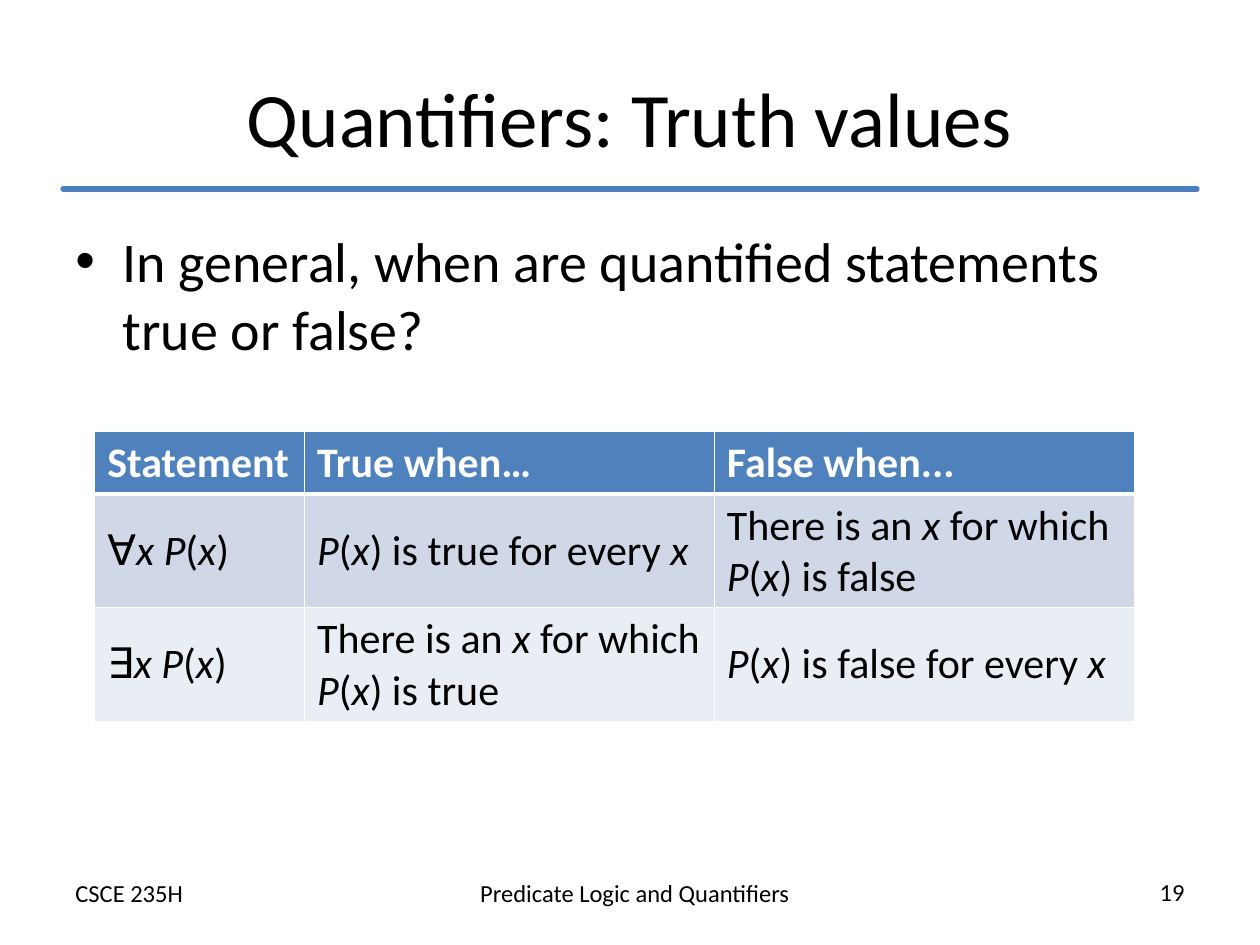
from lxml.etree import SubElement
from pptx import Presentation
from pptx.dml.color import RGBColor
from pptx.enum.shapes import MSO_CONNECTOR
from pptx.enum.text import MSO_ANCHOR, PP_ALIGN
from pptx.oxml.ns import qn
from pptx.util import Cm, Pt


def color(value):
    return RGBColor.from_string(value)


def write(text_frame, text, size, font_color="000000", bold=False, align=PP_ALIGN.LEFT):
    paragraph = text_frame.paragraphs[0]
    paragraph.alignment = align
    for index, part in enumerate(text.split("*")):
        if part:
            run = paragraph.add_run()
            run.text = part
            run.font.name = "Calibri"
            run.font.size = Pt(size)
            run.font.bold = bold
            run.font.italic = index % 2 == 1
            run.font.color.rgb = color(font_color)
    return paragraph


presentation = Presentation()
presentation.slide_width = Cm(25.4)
presentation.slide_height = Cm(19.05)
slide = presentation.slides.add_slide(presentation.slide_layouts[6])

rule = slide.shapes.add_connector(MSO_CONNECTOR.STRAIGHT, Cm(1.27), Cm(3.81), Cm(24.13), Cm(3.81))
rule.line.color.rgb = color("4B7EBC")
rule.line.width = Pt(3)
rule.line._get_or_add_ln().set("cap", "rnd")
SubElement(rule._element.spPr, qn("a:effectLst"))

text_boxes = [
    ("CSCE 235H", 1.27, 17.58, 7.42, 0.86, 14, PP_ALIGN.LEFT, MSO_ANCHOR.TOP),
    ("Predicate Logic and Quantifiers", 9.09, 17.58, 7.42, 0.86, 14, PP_ALIGN.CENTER, MSO_ANCHOR.TOP),
    ("19", 16.71, 17.55, 7.42, 0.86, 14, PP_ALIGN.RIGHT, MSO_ANCHOR.TOP),
    ("Quantifiers: Truth values", 1.27, 0.76, 22.86, 3.18, 44, PP_ALIGN.CENTER, MSO_ANCHOR.MIDDLE),
    ("In general, when are quantified statements true or false?",
     1.27, 4.45, 22.86, 12.57, 32, PP_ALIGN.LEFT, MSO_ANCHOR.TOP),
]
for text, left, top, width, height, size, align, anchor in text_boxes:
    shape = slide.shapes.add_textbox(Cm(left), Cm(top), Cm(width), Cm(height))
    shape.text_frame.word_wrap = True
    shape.text_frame.vertical_anchor = anchor
    paragraph = write(shape.text_frame, text, size, align=align)

paragraph.space_before = Pt(6.4)
properties = paragraph._p.get_or_add_pPr()
properties.set("marL", str(Cm(0.95)))
properties.set("indent", str(-Cm(0.95)))
SubElement(properties, qn("a:buFont")).set("typeface", "Arial")
SubElement(properties, qn("a:buChar")).set("char", "•")

rows = [
    ["Statement", "True when…", "False when..."],
    ["∀*x P*(*x*)", "*P*(*x*) is true for every *x*", "There is an* x *for which* P*(*x*) is false"],
    ["∃*x P*(*x*)", "There is an* x *for which* P*(*x*) is true", "*P*(*x*) is false for every *x*"],
]
column_widths = [4.23, 8.26, 8.47]
row_heights = [1.27, 2.29, 2.29]
row_fills = ["4F81BD", "D0D8E8", "E9EDF4"]
table = slide.shapes.add_table(
    3, 3, Cm(1.91), Cm(8.69), Cm(sum(column_widths)), Cm(sum(row_heights))
).table
for column, width in zip(table.columns, column_widths):
    column.width = Cm(width)
for row_index, texts in enumerate(rows):
    table.rows[row_index].height = Cm(row_heights[row_index])
    header = row_index == 0
    border_widths = {"lnL": 1, "lnR": 1, "lnT": 3 if row_index == 1 else 1, "lnB": 3 if header else 1}
    for column_index, text in enumerate(texts):
        cell = table.cell(row_index, column_index)
        cell.vertical_anchor = MSO_ANCHOR.MIDDLE
        write(cell.text_frame, text, 24, "FFFFFF" if header else "000000", header)
        for side, width in border_widths.items():
            border = SubElement(cell._tc.get_or_add_tcPr(), qn(f"a:{side}"), w=str(Pt(width)))
            fill = SubElement(border, qn("a:solidFill"))
            SubElement(fill, qn("a:srgbClr"), val="FFFFFF")
        cell.fill.solid()
        cell.fill.fore_color.rgb = color(row_fills[row_index])

presentation.save("out.pptx")
